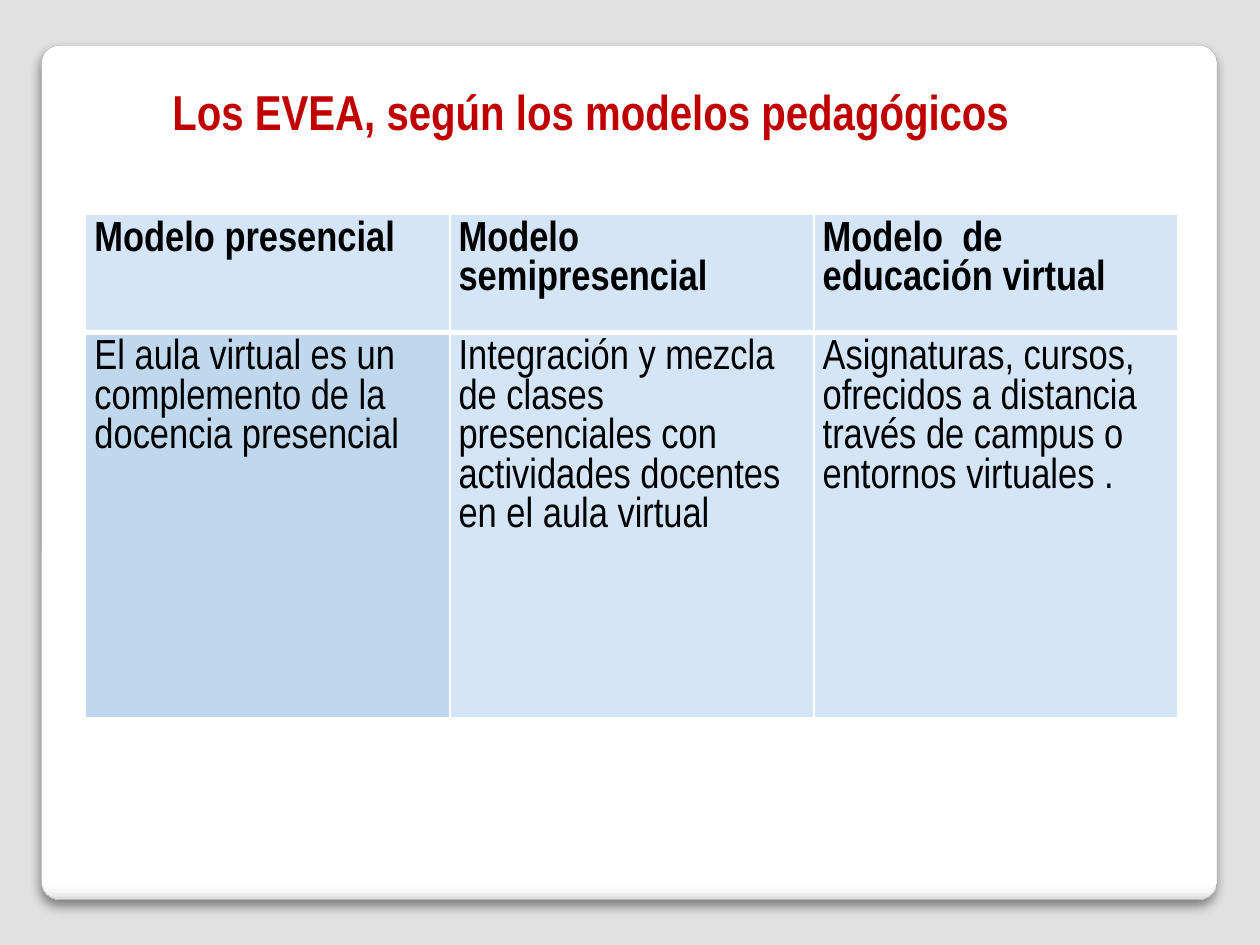
from lxml import etree
from pptx import Presentation
from pptx.dml.color import RGBColor
from pptx.enum.shapes import MSO_SHAPE
from pptx.enum.text import PP_ALIGN
from pptx.oxml.ns import qn
from pptx.util import Inches, Pt

ROUNDED = MSO_SHAPE.ROUNDED_RECTANGLE
JUSTIFY = PP_ALIGN.JUSTIFY

FONT = "Arial Narrow"
BACKDROP = RGBColor(0xE1, 0xE1, 0xE1)
PANEL_EDGE = RGBColor(0xA4, 0xA4, 0xA4)
PANEL_STOPS = [(0, RGBColor(0xFF, 0xFF, 0xFF)), (98, RGBColor(0xFF, 0xFF, 0xFF)),
               (99, RGBColor(0xF7, 0xF7, 0xF7)), (100, RGBColor(0xDA, 0xDA, 0xDA))]
WHITE = RGBColor(0xFF, 0xFF, 0xFF)
BLACK = RGBColor(0, 0, 0)
RED = RGBColor(0xC0, 0, 0)
LIGHT_BLUE = RGBColor(0xD4, 0xE5, 0xF7)
MID_BLUE = RGBColor(0xC0, 0xD8, 0xED)

MODELS = [
    ("Modelo presencial",
     "El aula virtual es un complemento de la docencia presencial"),
    ("Modelo semipresencial",
     "Integración y mezcla de clases presenciales con actividades docentes en el aula virtual"),
    ("Modelo  de educación virtual",
     "Asignaturas, cursos, ofrecidos a distancia través de campus o entornos virtuales ."),
]


def add_node(parent, tag, **attributes):
    """Append a DrawingML element and return it."""
    node = etree.SubElement(parent, qn(tag))
    for key, value in attributes.items():
        node.set(key, str(value))
    return node


def write_text(frame, text, size=24, color=BLACK, bold=False, align=None, before=None):
    """Write one formatted paragraph into a text frame."""
    frame.word_wrap = True
    paragraph = frame.paragraphs[0]
    paragraph.alignment = align
    paragraph.space_before = before
    run = paragraph.add_run()
    run.text = text
    run.font.name = FONT
    run.font.size = Pt(size)
    run.font.bold = bold
    run.font.color.rgb = color
    return paragraph


def add_panel(slide):
    """Draw the rounded white panel with its soft shadow."""
    panel = slide.shapes.add_shape(ROUNDED, Inches(0.33), Inches(0.36),
                                   Inches(9.33), Inches(6.78))
    panel.adjustments[0] = 0.021
    panel.fill.gradient()
    panel.fill.gradient_angle = 270
    stops = panel.element.spPr.find(".//" + qn("a:gsLst"))
    stops.clear()
    for position, color in PANEL_STOPS:
        stop = add_node(stops, "a:gs", pos=position * 1000)
        add_node(stop, "a:srgbClr", val=color)
    panel.line.color.rgb = PANEL_EDGE
    panel.line.width = Pt(0.16)
    panel.shadow.inherit = False
    effects = panel.element.spPr.find(qn("a:effectLst"))
    shadow = add_node(effects, "a:outerShdw", blurRad=Pt(6), dist=Pt(4),
                      dir=5400000, algn="t", rotWithShape=0)
    shade = add_node(shadow, "a:srgbClr", val=BLACK)
    add_node(shade, "a:alpha", val=45000)


def add_title(slide, text):
    """Place the slide heading."""
    heading = slide.shapes.add_textbox(Inches(1.23), Inches(0.6),
                                       Inches(7.69), Inches(0.51))
    paragraph = write_text(heading.text_frame, text, size=28, color=RED, bold=True,
                           align=JUSTIFY, before=Pt(5.6))
    paragraph._p.get_or_add_pPr().set("marL", str(Inches(0.04)))


def set_borders(cell, **widths):
    """Give a cell white borders, with widths in points by side."""
    properties = cell._tc.get_or_add_tcPr()
    for index, side in enumerate("LRTB"):
        border = etree.Element(qn(f"a:ln{side}"), w=str(Pt(widths.get(side, 1))))
        fill = add_node(border, "a:solidFill")
        add_node(fill, "a:srgbClr", val=WHITE)
        properties.insert(index, border)


def fill_cell(cell, text, color, bold=False, **borders):
    """Set the text, fill, margins and borders of a cell."""
    cell.margin_left = cell.margin_right = Inches(0.07)
    cell.margin_top = cell.margin_bottom = Inches(0.05)
    cell.fill.solid()
    cell.fill.fore_color.rgb = color
    write_text(cell.text_frame, text, bold=bold)
    set_borders(cell, **borders)


def add_models_table(slide):
    """Build the comparison of teaching models, one model per column."""
    table = slide.shapes.add_table(2, len(MODELS), Inches(0.68), Inches(1.7),
                                   Inches(8.67), Inches(4)).table
    table.rows[0].height = Inches(0.94)
    table.rows[1].height = Inches(3.06)
    for column, (model, description) in enumerate(MODELS):
        table.columns[column].width = Inches(2.89)
        fill_cell(table.cell(0, column), model, LIGHT_BLUE, bold=True, B=3)
        body_color = LIGHT_BLUE if column else MID_BLUE
        fill_cell(table.cell(1, column), description, body_color, T=3)


def main():
    """Build and save the slide."""
    deck = Presentation()
    deck.slide_width = Inches(10)
    deck.slide_height = Inches(7.5)
    slide = deck.slides.add_slide(deck.slide_layouts[6])
    slide.background.fill.solid()
    slide.background.fill.fore_color.rgb = BACKDROP
    add_panel(slide)
    add_title(slide, "Los EVEA, según los modelos pedagógicos")
    add_models_table(slide)
    deck.save("out.pptx")


if __name__ == "__main__":
    main()
